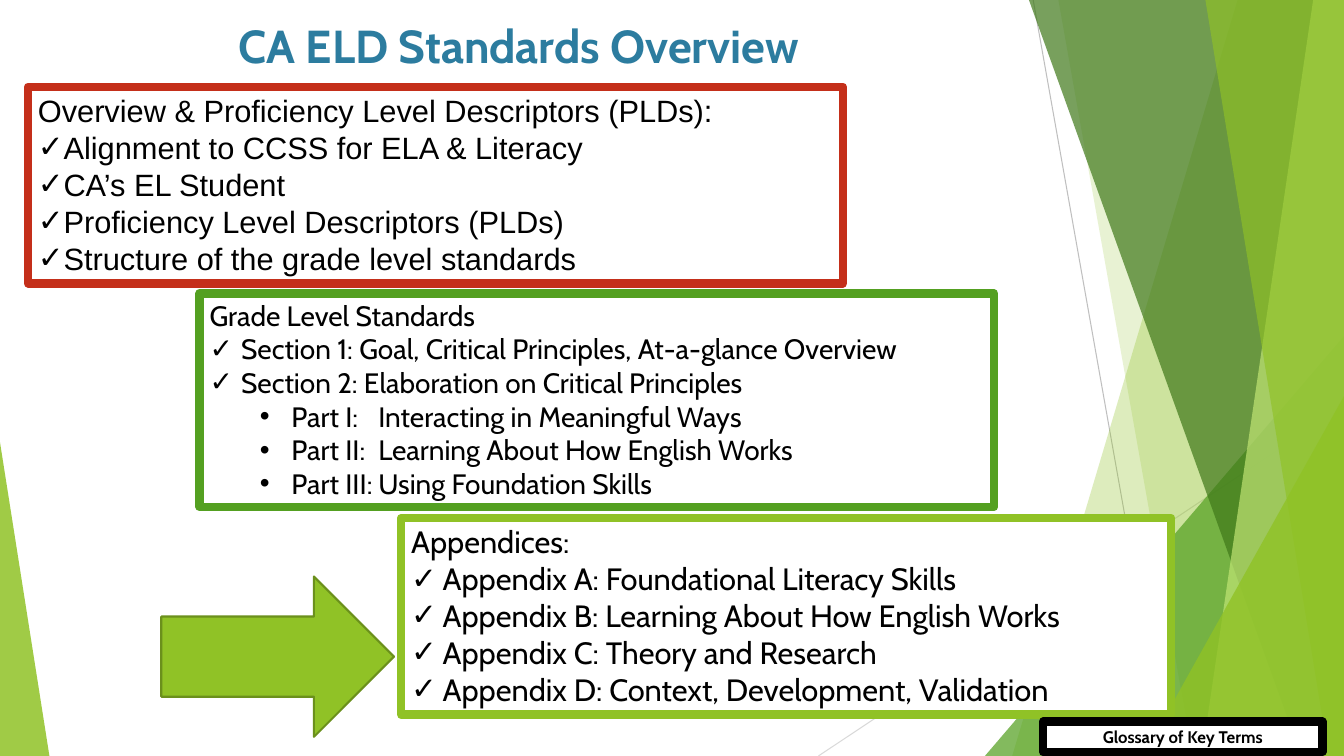
from dataclasses import dataclass

from lxml.etree import SubElement
from pptx import Presentation
from pptx.dml.color import RGBColor
from pptx.enum.shapes import MSO_CONNECTOR, MSO_SHAPE
from pptx.enum.text import MSO_ANCHOR, MSO_AUTO_SIZE, PP_ALIGN
from pptx.oxml.ns import qn
from pptx.shapes.autoshape import Shape
from pptx.text.text import TextFrame
from pptx.util import Pt

WIDE, HIGH = 960, 540
HUES = {
    "white": "FFFFFF", "black": "000000", "red": "C42F1A", "green": "54A021",
    "lime": "90C226", "moss": "3F7819", "pale": "C0E474", "olive": "6B901C",
    "blue": "2C7C9F", "gray": "BFBFBF", "silver": "D9D9D9",
}


@dataclass
class Ray:
    start: tuple[float, float]
    end: tuple[float, float]
    hue: str


@dataclass
class Shard:
    top: float
    base: float
    hue: str
    alpha: int


@dataclass
class Wedge:
    left: float
    top: float
    width: float
    adjust: int
    hue: str
    alpha: int


@dataclass
class Line:
    text: str
    mark: str = ""
    margin: float = 0
    hang: float = 0
    level: int = 0
    tab: float = 0


@dataclass
class Panel:
    place: tuple[float, float, float, float]
    edge: str
    font: str
    size: float
    lines: list[Line]
    bold: bool = False
    align: PP_ALIGN = PP_ALIGN.LEFT


def check(text: str, margin: float = 22.5) -> Line:
    return Line(text, "✓", margin, -margin)


def part(text: str) -> Line:
    return Line(text, "•", 58.5, -22.5, 1, 120.5)


RAYS = [Ray((738, 0), (834, HIGH), "gray"), Ray((WIDE, 290), (584.6, HIGH), "silver")]
GLASS = [
    Shard(884, 723, "lime", 30),
    Shard(756, 852, "lime", 20),
    Wedge(703.5, 240, 256.5, 1, "green", 72),
    Shard(735, 929.5, "moss", 70),
    Shard(938, 858.5, "pale", 70),
    Shard(861, 949, "lime", 65),
    Wedge(816.5, 283, 143.5, 1, "lime", 80),
    Wedge(0, 316, 35.3, 0, "lime", 85),
]
PANELS = [
    Panel((20, 62, 582, 140.4), "red", "Arial", 22, [
        Line("Overview & Proficiency Level Descriptors (PLDs):"),
        check("Alignment to CCSS for ELA & Literacy", 0),
        check("CA’s EL Student", 0),
        check("Proficiency Level Descriptors (PLDs)", 0),
        check("Structure of the grade level standards", 0),
    ]),
    Panel((142.6, 209.5, 567.4, 152.6), "green", "Cabin", 20, [
        Line("Grade Level Standards"),
        check("Section 1: Goal, Critical Principles, At-a-glance Overview"),
        check("Section 2: Elaboration on Critical Principles"),
        part("Part I:\tInteracting in Meaningful Ways"),
        part("Part II:\tLearning About How English Works"),
        part("Part III:\tUsing Foundation Skills"),
    ]),
    Panel((286.6, 370, 550, 140.4), "lime", "Cabin", 22, [
        Line("Appendices:"),
        check("Appendix A: Foundational Literacy Skills"),
        check("Appendix B: Learning About How English Works"),
        check("Appendix C: Theory and Research"),
        check("Appendix D: Context, Development, Validation"),
    ]),
    Panel((745.2, 515.5, 199.4, 21.6), "black", "Cabin", 12,
          [Line("Glossary of Key Terms")], True, PP_ALIGN.CENTER),
]


def tint(name: str) -> RGBColor:
    return RGBColor.from_string(HUES[name])


def paint(shape: Shape, hue: str, alpha: int = 100) -> None:
    shape.shadow.inherit = False
    shape.fill.solid()
    shape.fill.fore_color.rgb = tint(hue)
    shape.line.fill.background()
    if alpha < 100:
        color = shape.fill._xPr.find(qn("a:solidFill"))[0]
        SubElement(color, qn("a:alpha"), val=str(alpha * 1000))


def trim(shape: Shape, hue: str, width: float) -> None:
    shape.line.color.rgb = tint(hue)
    shape.line.width = Pt(width)


def draw_ray(shapes, ray: Ray) -> None:
    ends = [Pt(n) for n in ray.start + ray.end]
    wire = shapes.add_connector(MSO_CONNECTOR.STRAIGHT, *ends)
    trim(wire, ray.hue, 0.75)
    SubElement(wire._element.spPr, qn("a:effectLst"))


def draw_glass(shapes, pane: Shard | Wedge) -> None:
    if isinstance(pane, Shard):
        build = shapes.build_freeform(Pt(pane.top), 0, scale=1)
        spots = [(WIDE, 0), (WIDE, HIGH), (pane.base, HIGH)]
        build.add_line_segments([(Pt(x), Pt(y)) for x, y in spots], close=True)
        shape = build.convert_to_shape()
    else:
        shape = shapes.add_shape(MSO_SHAPE.ISOSCELES_TRIANGLE, Pt(pane.left), Pt(pane.top),
                                 Pt(pane.width), Pt(HIGH - pane.top))
        shape.adjustments[0] = pane.adjust
    paint(shape, pane.hue, pane.alpha)


def write(frame: TextFrame, lines: list[Line], font: str, size: float,
          hue: str, bold: bool, align: PP_ALIGN) -> None:
    frame.word_wrap = True
    frame.vertical_anchor = MSO_ANCHOR.TOP
    for num, line in enumerate(lines):
        para = frame.add_paragraph() if num else frame.paragraphs[0]
        para.alignment = align
        para.level = line.level
        props = para._p.get_or_add_pPr()
        props.set("marL", str(Pt(line.margin)))
        props.set("indent", str(Pt(line.hang)))
        if line.mark:
            SubElement(props, qn("a:buFont"), typeface="Arial")
            SubElement(props, qn("a:buChar"), char=line.mark)
        if line.tab:
            tabs = SubElement(props, qn("a:tabLst"))
            SubElement(tabs, qn("a:tab"), pos=str(Pt(line.tab)), algn="l")
        run = para.add_run()
        run.text = line.text
        run.font.name = font
        run.font.size = Pt(size)
        run.font.bold = bold
        run.font.color.rgb = tint(hue)


def draw_panel(shapes, panel: Panel) -> None:
    box = shapes.add_shape(MSO_SHAPE.RECTANGLE, *[Pt(n) for n in panel.place])
    paint(box, "white")
    trim(box, panel.edge, 6)
    SubElement(box.line._get_or_add_ln(), qn("a:round"))
    write(box.text_frame, panel.lines, panel.font, panel.size, "black", panel.bold, panel.align)
    box.text_frame.auto_size = MSO_AUTO_SIZE.SHAPE_TO_FIT_TEXT


def main() -> None:
    deck = Presentation()
    deck.slide_width, deck.slide_height = Pt(WIDE), Pt(HIGH)
    shapes = deck.slides.add_slide(deck.slide_layouts[6]).shapes
    for ray in RAYS:
        draw_ray(shapes, ray)
    for pane in GLASS:
        draw_glass(shapes, pane)
    for panel in PANELS:
        draw_panel(shapes, panel)
    title = shapes.add_textbox(Pt(163.4), Pt(8.6), Pt(633.6), Pt(77.8))
    write(title.text_frame, [Line("CA ELD Standards Overview")], "Cabin", 33,
          "blue", True, PP_ALIGN.LEFT)
    arrow = shapes.add_shape(MSO_SHAPE.RIGHT_ARROW, Pt(115.2), Pt(411.8), Pt(166.3), Pt(114.5))
    paint(arrow, "lime")
    trim(arrow, "olive", 1.5)
    deck.save("out.pptx")


if __name__ == "__main__":
    main()
